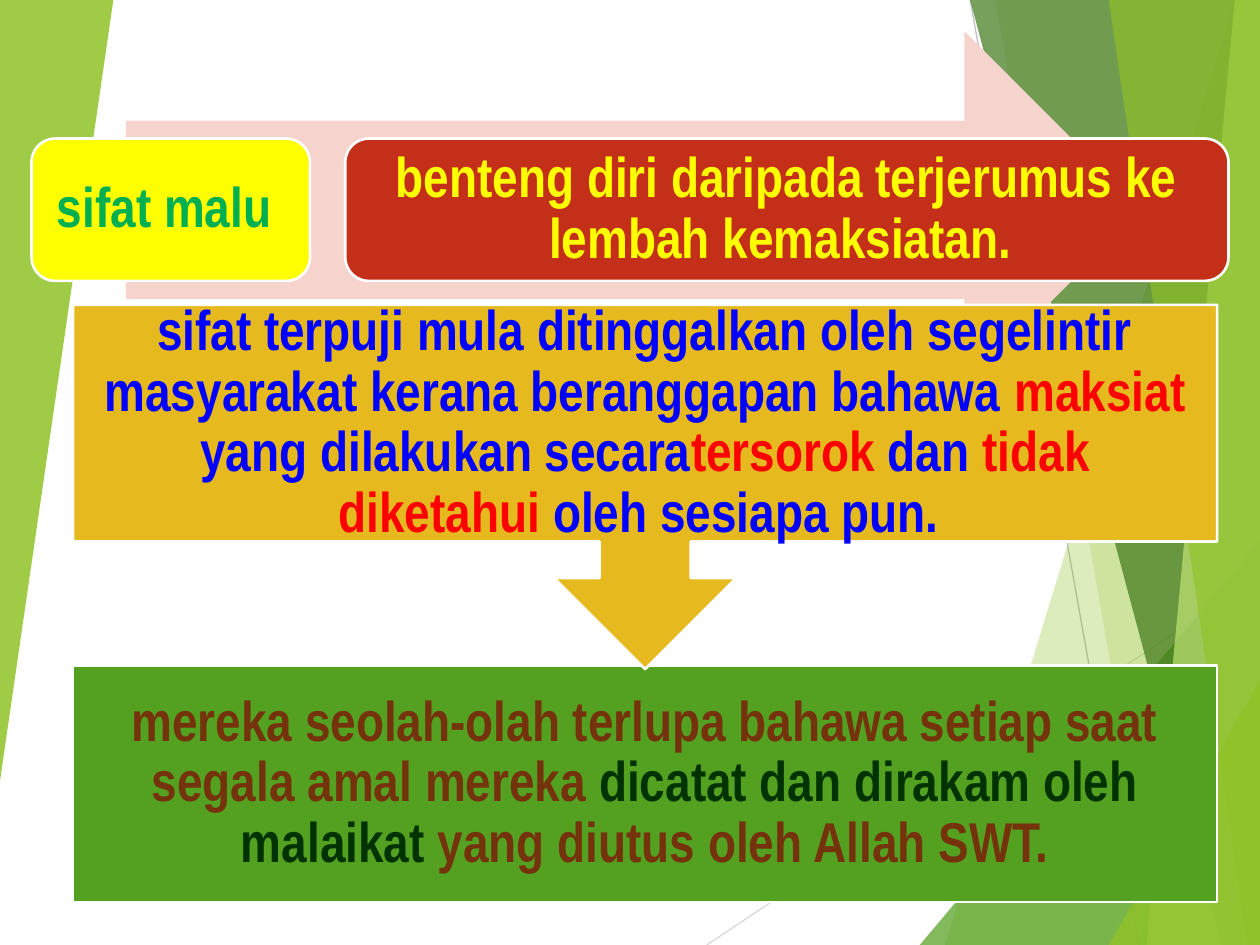
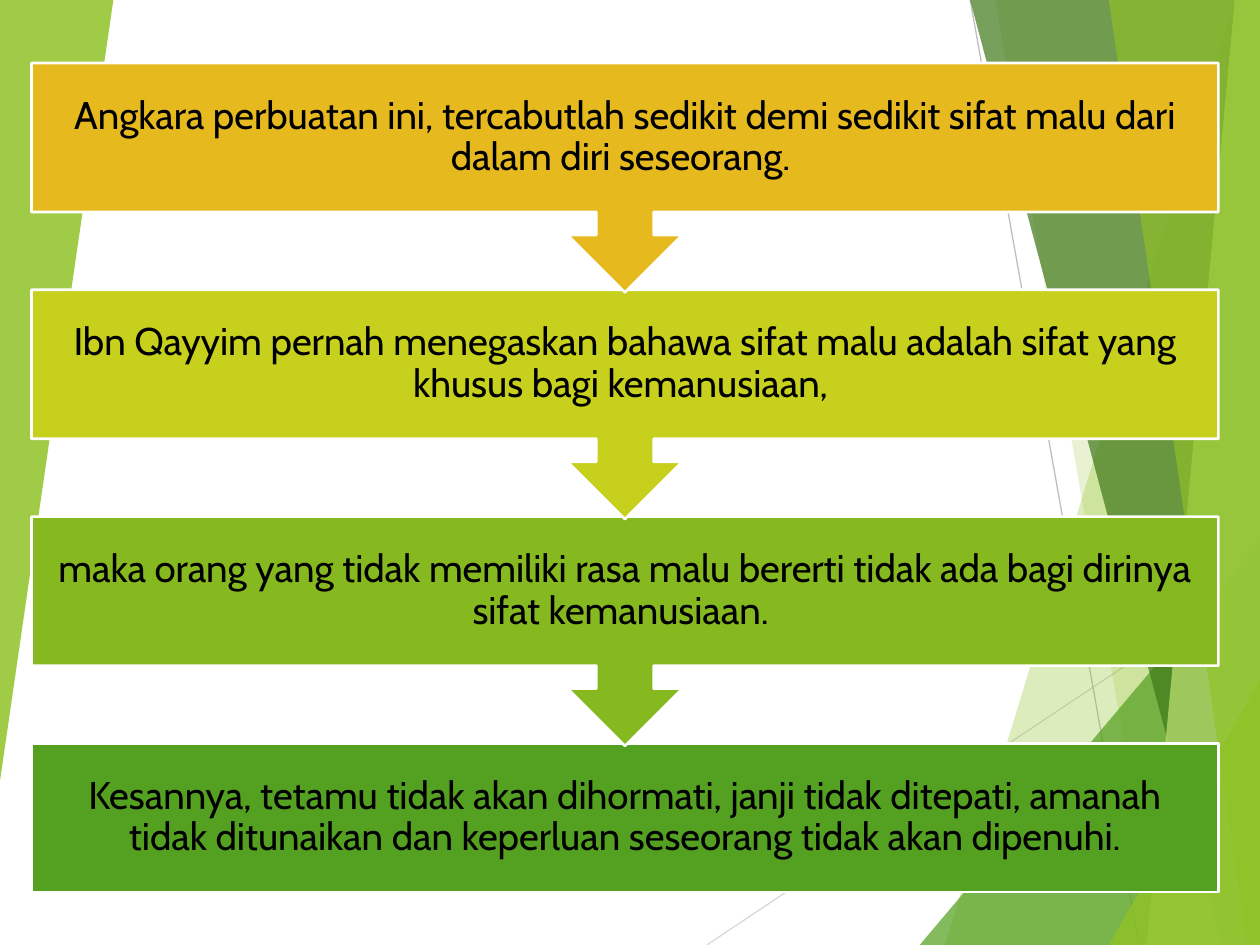
import pptx
import pptx.util
import pptx.dml.color
import pptx.enum.shapes
import pptx.enum.text
import pptx.oxml.ns
import lxml.etree

kinds = pptx.enum.shapes.MSO_SHAPE
qn = pptx.oxml.ns.qn

# The slide is a grid of 100 columns by 75 rows.
cell = pptx.util.Inches(0.1)
wide, high = 100, 75

gold, lime, leaf, green = "E6B91E", "C7D01D", "86B820", "54A021"
white, yellow, blue, red = "FFFFFF", "FFFF00", "0000FF", "FF0000"
brown, dark = "74330C", "003300"


def paint(fill, color):
    fill.solid()
    fill.fore_color.rgb = pptx.dml.color.RGBColor.from_string(color)


def add_box(slide, kind, place, color, runs=(), font="Arial Narrow",
            size=32, bold=True, inset=1.3, edge=True):
    """Add a filled shape; place is in cells, runs are (text, colour) pairs."""
    box = slide.shapes.add_shape(kind, *(int(n * cell) for n in place))
    box.shadow.inherit = False
    paint(box.fill, color)
    if edge:
        paint(box.line.fill, white)
        box.line.width = pptx.util.Pt(1.5)
    else:
        box.line.fill.background()
    frame = box.text_frame
    frame.word_wrap = True
    frame.vertical_anchor = pptx.enum.text.MSO_ANCHOR.MIDDLE
    frame.margin_left = frame.margin_right = int(inset * cell)
    frame.margin_top = frame.margin_bottom = int(inset * cell)
    para = frame.paragraphs[0]
    para.alignment = pptx.enum.text.PP_ALIGN.CENTER
    para.line_spacing = 0.9
    for text, ink in runs:
        run = para.add_run()
        run.text = text
        run.font.name = font
        run.font.size = pptx.util.Pt(size)
        run.font.bold = bold
        paint(run.font.fill, ink)


deck = pptx.Presentation()
deck.slide_width, deck.slide_height = wide * cell, high * cell
blank = deck.slide_layouts[6]
for holder in list(blank.placeholders):
    holder.element.getparent().remove(holder.element)
first, second = (deck.slides.add_slide(blank) for _ in range(2))

# Backdrop: drawn once, then moved to the layout that both slides use
rays = [
    ((56.1, high), (wide, 45.7), "D9D9D9"),
    ((77, 0), (90.4, high), "BFBFBF"),
]
for start, end, color in rays:
    ray = first.shapes.add_connector(
        pptx.enum.shapes.MSO_CONNECTOR.STRAIGHT,
        *(int(n * cell) for n in start + end))
    paint(ray.line.fill, color)
    ray.line.width = pptx.util.Pt(0.75)
    lxml.etree.SubElement(ray.element.spPr, qn("a:effectLst"))

# Each shard: colour, opacity in percent, corners
foot, top = (wide, high), (wide, 0)
shards = [
    ("90C226", 30, [(97.5, 0), (75.4, high), foot, top]),
    ("90C226", 20, [(78.8, 0), (91.9, high), foot, top]),
    (green, 72, [(72.6, high), (wide, 42.9), foot]),
    ("3F7819", 70, [(76.7, 0), (97, high), foot, top]),
    ("C0E474", 70, [(98.1, 0), (90.7, high), foot, top]),
    ("90C226", 65, [(88.3, 0), (98.6, high), foot, (99.8, 0)]),
    ("90C226", 80, [(88.1, high), (wide, 53.5), foot]),
    ("90C226", 85, [(0, 0), (9.4, 0), (0, 61.6)]),
]
for color, alpha, points in shards:
    pen = first.shapes.build_freeform(*points[0], scale=cell)
    pen.add_line_segments(points[1:], close=True)
    shard = pen.convert_to_shape()
    shard.shadow.inherit = False
    shard.line.fill.background()
    paint(shard.fill, color)
    tint = shard.element.spPr.find(qn("a:solidFill")).find(qn("a:srgbClr"))
    lxml.etree.SubElement(tint, qn("a:alpha"), val=str(alpha * 1000))

tree = blank.shapes.element
for shape in list(first.shapes):
    tree.append(shape.element)

# First slide: arrow with two labels, then two steps
add_box(first, kinds.RIGHT_ARROW, (10, 2.5, 80.7, 28.3), "F6D3CC", edge=False)
labels = [
    (2.5, 22.1, yellow, "sifat malu ", "00B050"),
    (27.4, 70.1, "C42F1A",
     "benteng diri daripada terjerumus ke lembah kemaksiatan. ", yellow),
]
for left, width, color, text, ink in labels:
    add_box(first, kinds.ROUNDED_RECTANGLE, (left, 11, width, 11.3), color,
            [(text, ink)])

add_box(first, kinds.RECTANGLE, (5.8, 52.8, 90.8, 18.8), green, [
    ("mereka seolah-olah terlupa bahawa setiap saat segala amal mereka ", brown),
    ("dicatat dan dirakam oleh malaikat ", dark),
    ("yang diutus oleh Allah SWT.", brown),
], inset=2.5)
add_box(first, kinds.DOWN_ARROW_CALLOUT, (5.8, 24.2, 90.8, 28.9), gold, [
    ("sifat terpuji mula ditinggalkan oleh segelintir masyarakat kerana "
     "beranggapan bahawa ", blue),
    ("maksiat", red),
    (" yang dilakukan secara", blue),
    ("tersorok ", red),
    ("dan ", blue),
    ("tidak diketahui ", red),
    ("oleh sesiapa pun. ", blue),
], inset=2.5)

# Second slide: four steps, laid from the last up so each arrow tip is on top
steps = [
    (gold, "Angkara perbuatan ini, tercabutlah sedikit demi sedikit sifat malu "
           "dari dalam diri seseorang. "),
    (lime, "Ibn Qayyim pernah menegaskan bahawa sifat malu adalah sifat yang "
           "khusus bagi kemanusiaan, "),
    (leaf, "maka orang yang tidak memiliki rasa malu bererti tidak ada bagi "
           "dirinya sifat kemanusiaan. "),
    (green, "Kesannya, tetamu tidak akan dihormati, janji tidak ditepati, amanah "
            "tidak ditunaikan dan keperluan seseorang tidak akan dipenuhi."),
]
last = len(steps) - 1
for row in range(last, -1, -1):
    color, text = steps[row]
    kind, height = kinds.DOWN_ARROW_CALLOUT, 18.2
    if row == last:
        kind, height = kinds.RECTANGLE, 11.8
    add_box(second, kind, (2.5, 5 + 18 * row, 94.2, height), color,
            [(text, "000000")], font="Cabin", size=22, bold=False, inset=1.7)

deck.save("out.pptx")
